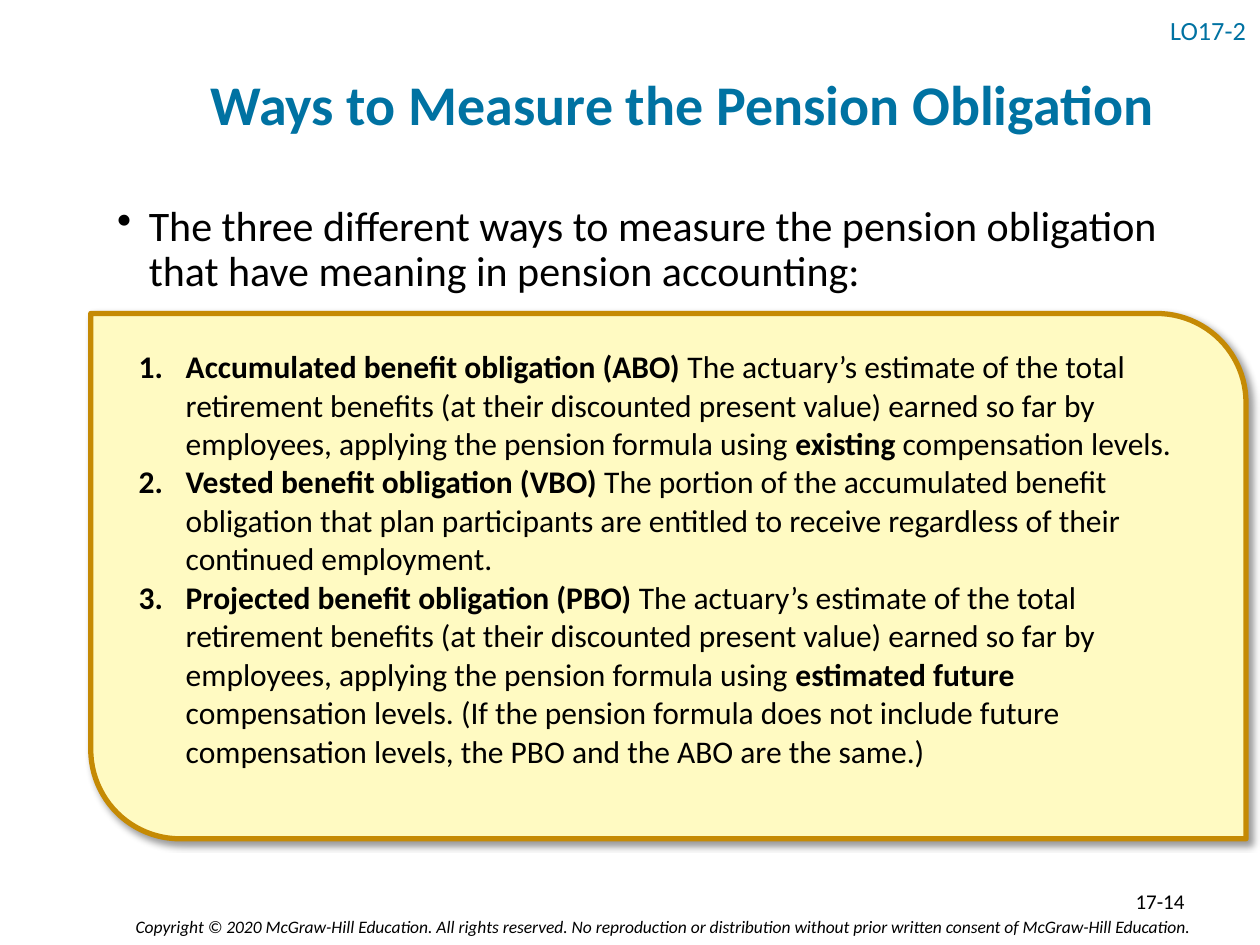
from lxml import etree
from pptx import Presentation
from pptx import util as u
from pptx.dml.color import RGBColor
from pptx.enum import shapes, text
from pptx.oxml import parse_xml
from pptx.oxml.ns import nsdecls, qn

BLUE, BLACK, CREAM, GOLD = "0072A2", "000000", "FFFAC2", "C58A04"
NO_GRID_STYLE = "{2D5ABB26-0587-4C30-8999-92F81FD0307C}"
ALIGN, ANCHOR = text.PP_ALIGN, text.MSO_ANCHOR

TITLE = "Ways to Measure the Pension Obligation"
INTRO = ("The three different ways to measure the pension obligation "
         "that have meaning in pension accounting:")
COPYRIGHT = ("Copyright © 2020 McGraw-Hill Education. All rights reserved. "
             "No reproduction or distribution without prior written consent "
             "of McGraw-Hill Education.")
ESTIMATE = ("The actuary’s estimate of the total retirement benefits (at their "
            "discounted present value) earned so far by employees, applying "
            "the pension formula using ")
# Runs alternate between bold and regular
OBLIGATIONS = [
    ["Accumulated benefit obligation (ABO) ", ESTIMATE,
     "existing ", "compensation levels."],
    ["Vested benefit obligation (VBO) ",
     "The portion of the accumulated benefit obligation that plan participants "
     "are entitled to receive regardless of their continued employment."],
    ["Projected benefit obligation (PBO) ", ESTIMATE,
     "estimated future ",
     "compensation levels. (If the pension formula does not include future "
     "compensation levels, the PBO and the ABO are the same.)"],
]


def color(hex_value):
    return RGBColor.from_string(hex_value)


def add_run(p, words, size, hex_value=BLACK, **formats):
    r = p.add_run()
    r.text = words
    r.font.color.rgb = color(hex_value)
    for name, value in {"name": "Calibri", "size": u.Pt(size), **formats}.items():
        setattr(r.font, name, value)


def add_bullet(p, indent, tag, **attributes):
    """Give a paragraph a hanging bullet or number."""
    pPr = p._p.get_or_add_pPr()
    pPr.set("marL", str(indent))
    pPr.set("indent", str(-indent))
    etree.SubElement(pPr, qn(tag), attributes)


def place(sp, box):
    for name, value in zip(("left", "top", "width", "height"), box):
        setattr(sp, name, u.Cm(value))


def write_line(sp, words, size, hex_value=BLACK, align=ALIGN.LEFT,
               anchor=ANCHOR.TOP, spacing=1.0, **formats):
    tf = sp.text_frame
    tf.word_wrap = True
    tf.vertical_anchor = anchor
    p = tf.paragraphs[0]
    for name, value in {"alignment": align, "line_spacing": spacing}.items():
        setattr(p, name, value)
    add_run(p, words, size, hex_value, **formats)
    return p


def add_text(s, box, words, size, **formats):
    sp = s.shapes.add_textbox(*map(u.Cm, box))
    return write_line(sp, words, size, **formats)


def add_header(s, box):
    left, top, width, height = box
    # Title
    place(s.shapes.title, box)
    write_line(s.shapes.title, TITLE, 32, BLUE, ALIGN.CENTER, ANCHOR.MIDDLE,
               1.1, bold=True)
    # Learning objective in the top right corner
    tag_width = 2.06
    add_text(s, (left + width - tag_width, top + 0.13, tag_width, 1.02),
             "LO17-2", 15, hex_value=BLUE, anchor=ANCHOR.MIDDLE, spacing=0.9)


def add_intro(s, box):
    p = add_text(s, box, INTRO, 24, spacing=0.9)
    add_bullet(p, u.Cm(0.64), "a:buChar", char="•")


def add_panel(s, box):
    left, top, width, height = box
    # Frame rounded at top right and bottom left
    sp = s.shapes.add_shape(shapes.MSO_SHAPE.ROUND_2_DIAG_RECTANGLE,
                            *map(u.Cm, box))
    sp.adjustments[0], sp.adjustments[1] = 0, 0.17
    sp.fill.solid()
    sp.fill.fore_color.rgb = color(CREAM)
    sp.line.color.rgb = color(GOLD)
    sp.line.width = u.Pt(3)
    sp.shadow.inherit = False
    sp._element.spPr.find(qn("a:effectLst")).append(parse_xml(
        f'<a:outerShdw {nsdecls("a")} blurRad="{u.Pt(4)}" dist="{u.Pt(3)}" '
        'dir="2700000" algn="tl" rotWithShape="0"><a:srgbClr val="000000">'
        '<a:alpha val="40000"/></a:srgbClr></a:outerShdw>'))

    # Numbered definitions in a one-cell table
    frame = s.shapes.add_table(1, 1, u.Cm(left + 0.71), u.Cm(top + 0.58),
                               u.Cm(21.69), u.Cm(9.17))
    table = frame.table
    table.first_row = table.horz_banding = False
    table._tbl.tblPr.find(qn("a:tableStyleId")).text = NO_GRID_STYLE
    cell = table.cell(0, 0)
    cell.fill.solid()
    cell.fill.fore_color.rgb = color(CREAM)
    tf = cell.text_frame
    for i, parts in enumerate(OBLIGATIONS):
        p = tf.add_paragraph() if i else tf.paragraphs[0]
        add_bullet(p, u.Cm(0.95), "a:buAutoNum", type="arabicPeriod")
        for j, words in enumerate(parts):
            add_run(p, words, 18, bold=j % 2 == 0)


def add_footer(s, box):
    left, top, width, height = box
    # Page number above the copyright line
    number_width = 5.92
    add_text(s, (left + width - number_width - 0.1, top, number_width, 1.02),
             "17-14", 12, align=ALIGN.RIGHT, anchor=ANCHOR.MIDDLE)
    add_text(s, (left, top + 0.69, width, 0.69), COPYRIGHT, 10,
             align=ALIGN.RIGHT, italic=True)


def main():
    prs = Presentation()
    prs.slide_width, prs.slide_height = u.Cm(25.4), u.Cm(19.05)
    s = prs.slides.add_slide(prs.slide_layouts[5])
    add_header(s, (2.11, 0, 23.29, 4.01))
    add_intro(s, (2.11, 4.01, 22.86, 2.74))
    add_panel(s, (1.83, 6.32, 23.29, 10.59))
    add_footer(s, (1.14, 17.65, 23.09, 1.38))
    prs.save("out.pptx")


if __name__ == "__main__":
    main()
